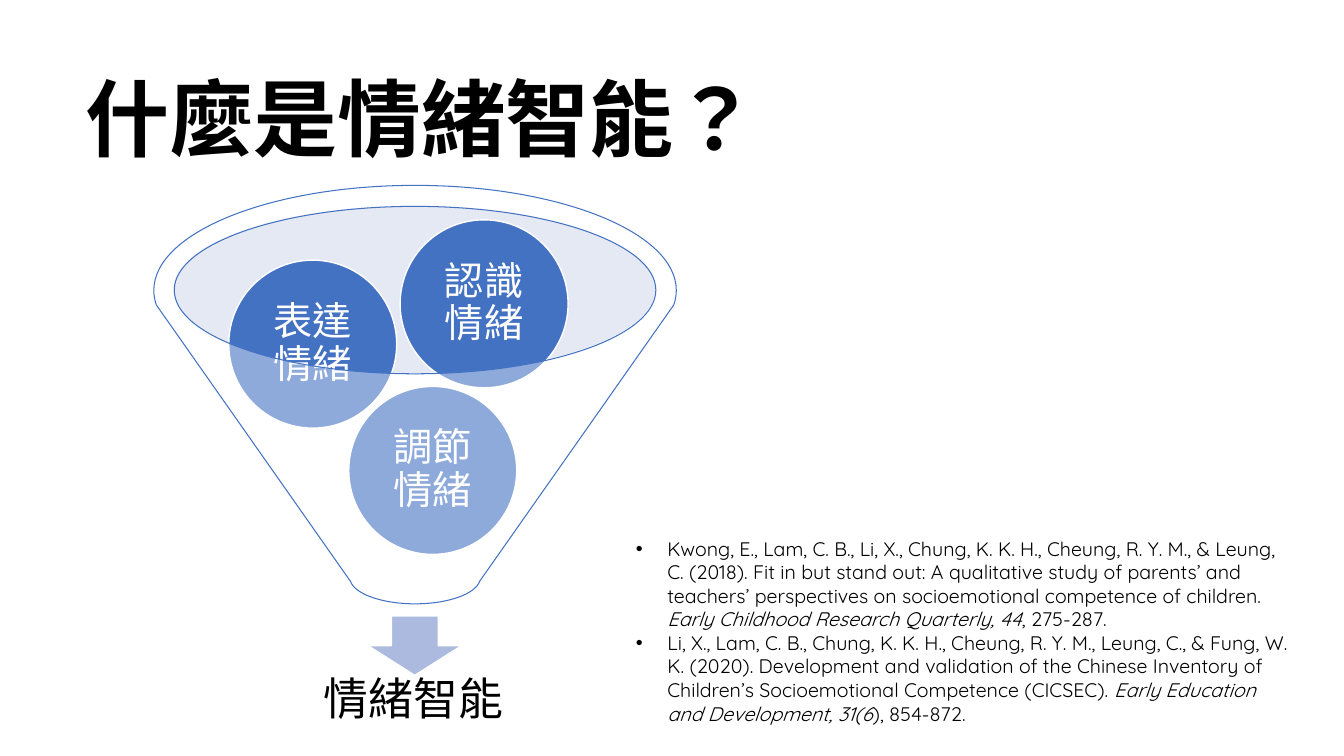
"""Build a slide that explains emotional intelligence with a funnel."""
from math import cos, radians, sin, tan

from lxml import etree
from pptx import Presentation
from pptx.dml.color import RGBColor
from pptx.enum.shapes import MSO_SHAPE
from pptx.enum.text import MSO_ANCHOR, PP_ALIGN
from pptx.oxml.ns import qn
from pptx.util import Pt

OVAL, ARROW = MSO_SHAPE.OVAL, MSO_SHAPE.DOWN_ARROW
TOP, MIDDLE = MSO_ANCHOR.TOP, MSO_ANCHOR.MIDDLE
LEFT, CENTER = PP_ALIGN.LEFT, PP_ALIGN.CENTER
HAN = "Noto Sans CJK TC"
COLORS = {"black": "000000", "white": "FFFFFF", "blue": "4372C3",
          "pale": "BFC8E3", "arrow": "ABBADE"}
TITLE = {"name": HAN, "size": Pt(60), "bold": True}
LABEL = {"name": "Arial", "size": Pt(32)}
BALL = {"name": "Arial", "size": Pt(28)}
CITE = {"name": "Quicksand", "size": Pt(14)}
BALLS = [("調節情緒", 249.1, 276), ("表達情緒", 163.4, 185.8),
         ("認識情緒", 285.8, 157)]
SIDE = 120
MID = 296.5
WORKS = [
    [("Kwong, E., Lam, C. B., Li, X., Chung, K. K. H., Cheung, R. Y. M., "
      "& Leung, C. (2018). Fit in but stand out: A qualitative study of "
      "parents’ and teachers’ perspectives on socioemotional competence "
      "of children. ", False),
     ("Early Childhood Research Quarterly, 44", True),
     (", 275-287.", False)],
    [("Li, X., Lam, C. B., Chung, K. K. H., Cheung, R. Y. M., Leung, C., "
      "& Fung, W. K. (2020). Development and validation of the Chinese "
      "Inventory of Children’s Socioemotional Competence (CICSEC). ", False),
     ("Early Education and Development, 31(6", True),
     ("), 854-872.", False)],
]


def color(name):
    """Return a named colour."""
    return RGBColor.from_string(COLORS[name])


def paint(shape, fill, line=None, width=1, alpha=None):
    """Set fill, line and opacity, and drop the shadow."""
    shape.shadow.inherit = False
    shape.fill.solid()
    shape.fill.fore_color.rgb = color(fill)
    if alpha:
        tone = shape.fill._xPr.find(qn("a:solidFill"))[0]
        etree.SubElement(tone, qn("a:alpha"), val=str(alpha * 1000))
    if line:
        shape.line.color.rgb = color(line)
        shape.line.width = Pt(width)
    else:
        shape.line.fill.background()


def form(slide, kind, box, *look, **more):
    """Add a painted preset shape."""
    shape = slide.shapes.add_shape(kind, *map(Pt, box))
    paint(shape, *look, **more)
    return shape


def add_run(para, text, font, tone, lang, italic=False):
    """Add one run with its font, colour and language."""
    run = para.add_run()
    run.text = text
    for key, value in font.items():
        setattr(run.font, key, value)
    run.font.italic = italic
    run.font.color.rgb = color(tone)
    props = run._r.get_or_add_rPr()
    props.set("lang", lang)
    etree.SubElement(props, qn("a:ea"), typeface=HAN)


def frame(shape, pads, anchor):
    """Set wrap, anchor and insets of a text frame."""
    text = shape.text_frame
    across, down = map(Pt, pads)
    style = {"word_wrap": True, "vertical_anchor": anchor,
             "margin_left": across, "margin_right": across,
             "margin_top": down, "margin_bottom": down}
    for key, value in style.items():
        setattr(text, key, value)
    return text


def write(shape, words, font, tone="black", pads=(7.2, 3.6), align=CENTER):
    """Write one paragraph of Chinese into a shape."""
    para = frame(shape, pads, MIDDLE).paragraphs[0]
    para.alignment, para.line_spacing = align, 0.9
    add_run(para, words, font, tone, "zh-TW")


def cite(slide, box, works):
    """Add the bulleted list of works."""
    text = frame(slide.shapes.add_textbox(*map(Pt, box)), (7.2, 3.6), TOP)
    for place, work in enumerate(works):
        para = text.add_paragraph() if place else text.paragraphs[0]
        props = para._p.get_or_add_pPr()
        props.set("marL", str(Pt(22.5)))
        props.set("indent", str(Pt(-22.5)))
        etree.SubElement(props, qn("a:buFont"), typeface="Arial")
        etree.SubElement(props, qn("a:buChar"), char="•")
        for words, italic in work:
            add_run(para, words, CITE, "black", "en-US", italic)


def arc(mid, wide, high, *stops):
    """List the start, then two handles and an end per step of an arc."""
    def spot(turn, pull=0):
        """Place a point, pulled along the tangent."""
        turn = radians(turn)
        return (Pt(MID + wide * (cos(turn) - pull * sin(turn))),
                Pt(mid + high * (sin(turn) + pull * cos(turn))))

    spots = [spot(stops[0])]
    for start, end in zip(stops, stops[1:]):
        pull = 4 / 3 * tan(radians(end - start) / 4)
        spots += [spot(start, pull), spot(end, -pull), spot(end)]
    return spots


def bend(lines):
    """Turn each three line steps into one curve."""
    for first, second, third in zip(lines[::3], lines[1::3], lines[2::3]):
        curve = etree.Element(qn("a:cubicBezTo"))
        first.addprevious(curve)
        for line in (first, second, third):
            curve.append(line[0])
            line.getparent().remove(line)


def funnel(slide):
    """Add the clear funnel with its open mouth."""
    rim = arc(207.4, 186.6, 75, 172, 180, 270, 360, 368)
    spout = arc(412.6, 46.6, 18.7, 8, 90, 172)
    mouth = arc(207.2, 172, 59.8, 180, 90, 0, -90, -180)
    build = slide.shapes.build_freeform(*rim[0], scale=1.0)
    build.add_line_segments(rim[1:] + spout, close=True)
    build.move_to(*mouth[0])
    build.add_line_segments(mouth[1:], close=True)
    shape = build.convert_to_shape()
    lines = list(shape._element.iter(qn("a:lnTo")))
    side = len(rim) - 1
    bend(lines[:side] + lines[side + 1:])
    paint(shape, "white", "blue", 0.75, 40)


def main():
    """Build and save the slide."""
    deck = Presentation()
    deck.slide_width, deck.slide_height = Pt(960), Pt(540)
    slide = deck.slides.add_slide(deck.slide_layouts[6])
    cite(slide, (447.1, 379.8, 483, 159.8), WORKS)
    title = slide.shapes.add_textbox(*map(Pt, (54, 36, 828, 104.4)))
    write(title, "什麼是情緒智能？", TITLE, align=LEFT)
    form(slide, OVAL, (123.8, 146.9, 344.2, 119.5), "pale", alpha=40)
    form(slide, ARROW, (262.8, 439.9, 67, 42.5), "arrow", "white")
    label = slide.shapes.add_textbox(*map(Pt, (135.4, 460.8, 319.7, 79.9)))
    write(label, "情緒智能", LABEL, pads=(18, 18))
    for words, left, top in BALLS:
        ball = form(slide, OVAL, (left, top, SIDE, SIDE), "blue", "white")
        write(ball, words, BALL, "white", (2.8, 2.8))
    funnel(slide)
    deck.save("out.pptx")


if __name__ == "__main__":
    main()
